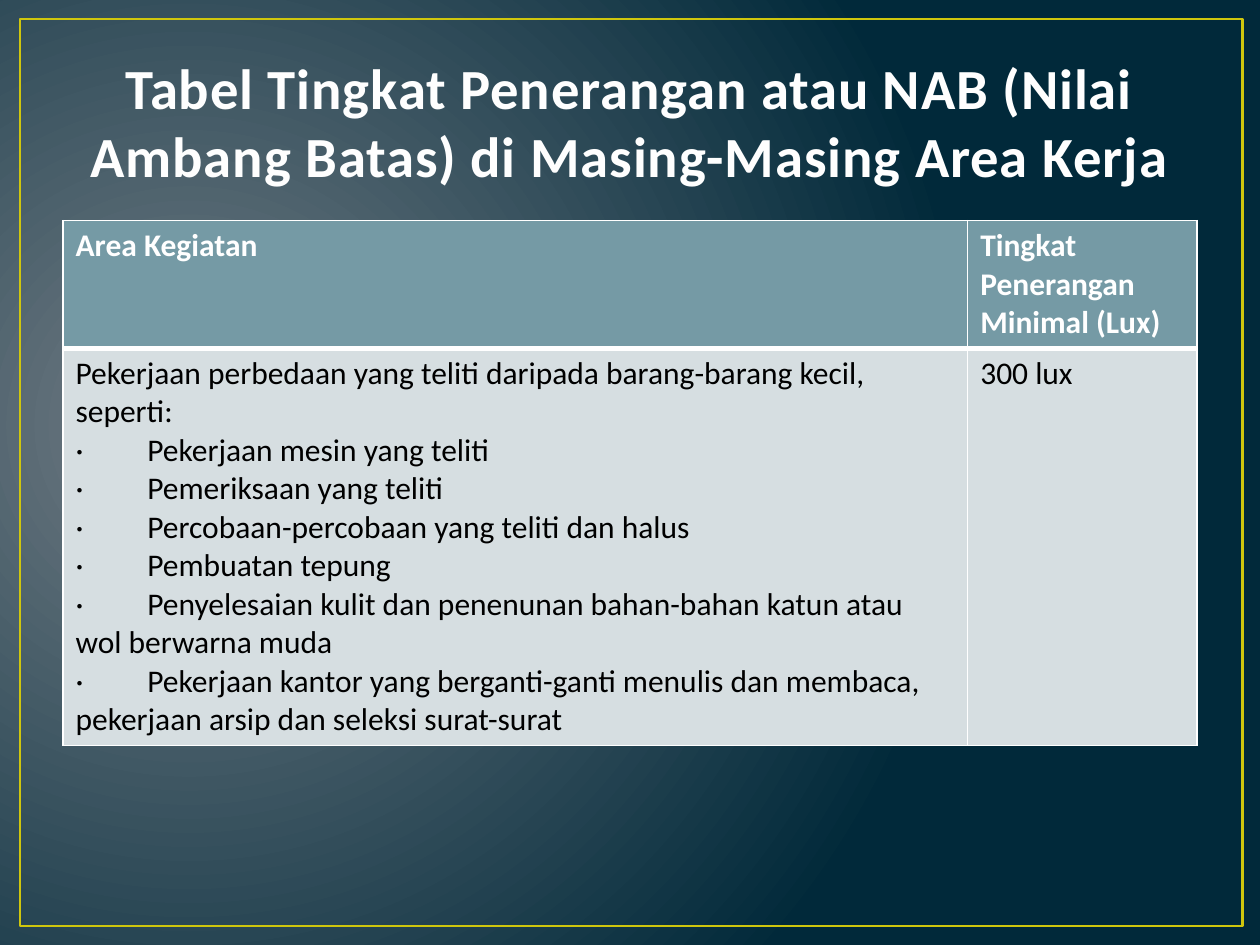
from lxml.etree import SubElement
from pptx import Presentation
from pptx.dml.color import RGBColor
from pptx.enum.shapes import MSO_SHAPE
from pptx.enum.text import MSO_ANCHOR, PP_ALIGN
from pptx.oxml import parse_xml
from pptx.oxml.ns import nsdecls, qn
from pptx.util import Pt

HUES = {
    "glow": "717C84", "deep": "01293A", "frame": "CFC60D", "title": "FEFEFE",
    "white": "FFFFFF", "black": "000000", "head": "759AA5", "body": "D6DEE1",
}
FONT = "Calibri"
TAB = Pt(41)


def style(par, size, hue, bold):
    for run in par.runs:
        run.font.name = FONT
        run.font.size = Pt(size)
        run.font.bold = bold
        run.font.color.rgb = RGBColor.from_string(HUES[hue])


def edge(cell, side, width):
    """Draw a white border on one side (L, R, T or B) of a cell."""
    line = SubElement(cell._tc.get_or_add_tcPr(), qn(f"a:ln{side}"), w=str(Pt(width)))
    fill = SubElement(line, qn("a:solidFill"))
    SubElement(fill, qn("a:srgbClr"), val=HUES["white"])


deck = Presentation()
deck.slide_width, deck.slide_height = Pt(720), Pt(540)
slide = deck.slides.add_slide(deck.slide_layouts[6])

# Background: a round glow left of the middle
slide.element.cSld.insert(0, parse_xml(f"""
<p:bg {nsdecls("p", "a")}><p:bgPr><a:gradFill rotWithShape="1">
  <a:gsLst>
    <a:gs pos="0"><a:srgbClr val="{HUES['glow']}"/></a:gs>
    <a:gs pos="100000"><a:srgbClr val="{HUES['deep']}"/></a:gs>
  </a:gsLst>
  <a:path path="circle"><a:fillToRect l="15000" t="50000" r="85000" b="60000"/></a:path>
</a:gradFill><a:effectLst/></p:bgPr></p:bg>"""))

# Frame
frame = slide.shapes.add_shape(MSO_SHAPE.RECTANGLE, Pt(11.5), Pt(10.8), Pt(698.4), Pt(518.4))
frame.shadow.inherit = False
frame.fill.background()
frame.line.color.rgb = RGBColor.from_string(HUES["frame"])
frame.line.width = Pt(1.5)

# Title
title = slide.shapes.add_textbox(Pt(36), Pt(21.6), Pt(648), Pt(90)).text_frame
title.word_wrap = True
title.vertical_anchor = MSO_ANCHOR.BOTTOM
title.text = "Tabel Tingkat Penerangan atau NAB (Nilai Ambang Batas) di Masing-Masing Area Kerja"
head = title.paragraphs[0]
head.alignment = PP_ALIGN.CENTER
style(head, 32.4, "title", True)
head.runs[0].font._element.set("spc", "50")

# Table
tasks = [
    "Pekerjaan mesin yang teliti",
    "Pemeriksaan yang teliti",
    "Percobaan-percobaan yang teliti dan halus",
    "Pembuatan tepung",
    "Penyelesaian kulit dan penenunan bahan-bahan katun atau wol berwarna muda",
    "Pekerjaan kantor yang berganti-ganti menulis dan membaca, "
    "pekerjaan arsip dan seleksi surat-surat",
]
intro = "Pekerjaan perbedaan yang teliti daripada barang-barang kecil, seperti:"
rows = [
    ["Area Kegiatan", "Tingkat Penerangan Minimal (Lux)"],
    ["\n".join([intro] + [f"·\t{task}" for task in tasks]), "300 lux"],
]
table = slide.shapes.add_table(2, 2, Pt(36), Pt(126), Pt(648), Pt(300)).table
for col, width in zip(table.columns, (517, 131)):
    col.width = Pt(width)
for row, height in zip(table.rows, (73, 227)):
    row.height = Pt(height)

for r, texts in enumerate(rows):
    top = r == 0
    for c, text in enumerate(texts):
        cell = table.cell(r, c)
        cell.text_frame.text = text
        for par in cell.text_frame.paragraphs:
            if par.text.startswith("·"):
                tabs = SubElement(par._p.get_or_add_pPr(), qn("a:tabLst"))
                SubElement(tabs, qn("a:tab"), pos=str(TAB), algn="l")
            style(par, 18, "white" if top else "black", top)
        for side in "LRTB":
            thick = side == ("B" if top else "T")
            edge(cell, side, 3 if thick else 1)
        cell.fill.solid()
        cell.fill.fore_color.rgb = RGBColor.from_string(HUES["head" if top else "body"])

deck.save("out.pptx")
